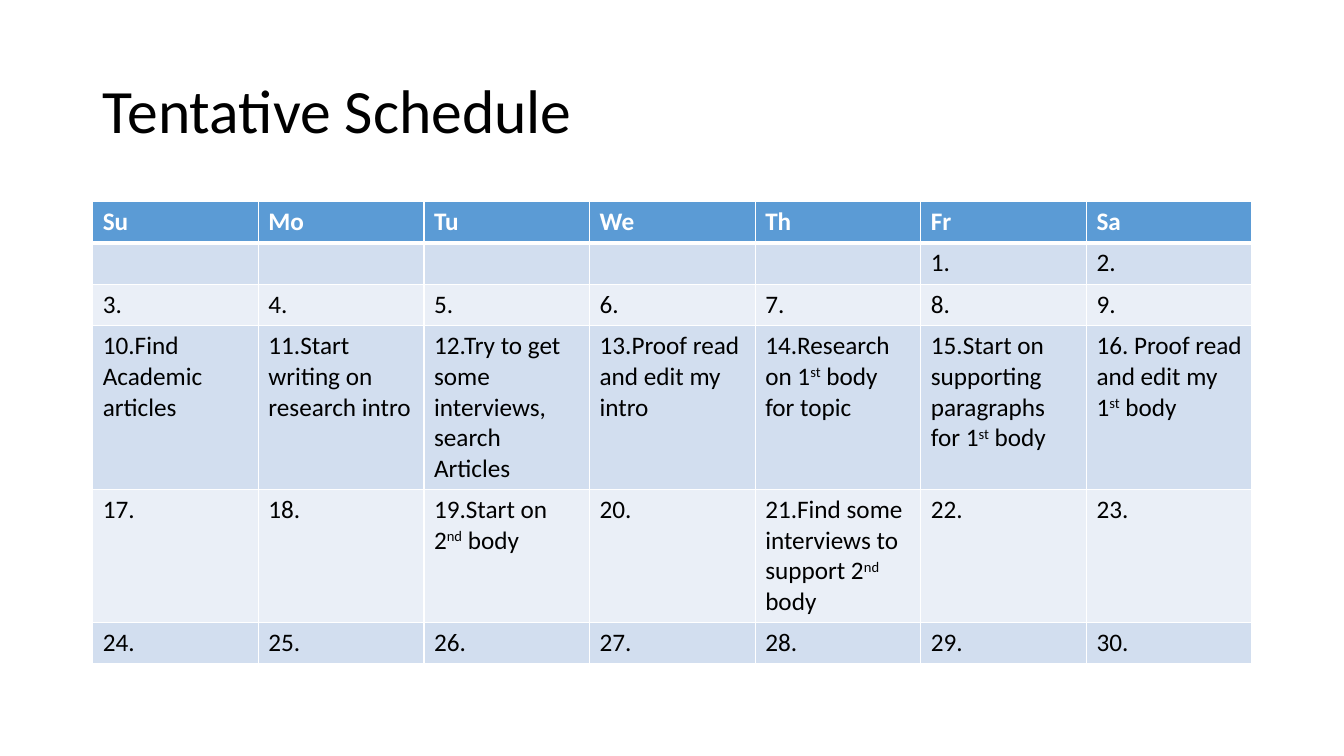
from dataclasses import dataclass

from lxml.etree import SubElement
from pptx import Presentation
from pptx.dml.color import RGBColor
from pptx.enum.text import MSO_ANCHOR, MSO_AUTO_SIZE, PP_ALIGN
from pptx.oxml.ns import qn
from pptx.slide import Slide
from pptx.table import _Cell
from pptx.text.text import _Paragraph
from pptx.util import Inches, Pt

BLACK = RGBColor(0x00, 0x00, 0x00)
WHITE = RGBColor(0xFF, 0xFF, 0xFF)
HEADER_BLUE = RGBColor(0x5B, 0x9B, 0xD5)
BAND_FILLS = (RGBColor(0xEA, 0xEF, 0xF7), RGBColor(0xD2, 0xDE, 0xEF))
FONT = "Calibri"

WEEKDAYS = ("Su", "Mo", "Tu", "We", "Th", "Fr", "Sa")
FIRST_WEEKDAY = WEEKDAYS.index("Fr")
DAYS_IN_MONTH = 30
ROW_HEIGHTS = (0.41, 0.41, 0.41, 1.62, 1.32, 0.41)


@dataclass(frozen=True)
class Task:
    text: str
    ordinal: str = ""
    rest: str = ""


TASKS: dict[int, Task] = {
    10: Task("Find Academic articles"),
    11: Task("Start writing on research intro"),
    12: Task("Try to get some interviews, search Articles"),
    13: Task("Proof read and edit my intro"),
    14: Task("Research on 1", "st", " body for topic"),
    15: Task("Start on supporting paragraphs for 1", "st", " body"),
    16: Task(" Proof read and edit my 1", "st", " body"),
    19: Task("Start on 2", "nd", " body"),
    21: Task("Find some interviews to support 2", "nd", " body"),
}


def add_run(paragraph: _Paragraph, text: str, size: int, color: RGBColor,
            bold: bool = False, raised: bool = False) -> None:
    run = paragraph.add_run()
    run.text = text
    run.font.name = FONT
    run.font.size = Pt(size)
    run.font.bold = bold
    run.font.color.rgb = color
    if raised:
        run.font._element.set("baseline", "30000")


def format_cell(cell: _Cell, fill: RGBColor, top: int = 1, bottom: int = 1) -> None:
    properties = cell._tc.get_or_add_tcPr()
    for side, width in (("L", 1), ("R", 1), ("T", top), ("B", bottom)):
        border = SubElement(properties, qn(f"a:ln{side}"), w=str(Pt(width)))
        border_fill = SubElement(border, qn("a:solidFill"))
        SubElement(border_fill, qn("a:srgbClr"), val=str(WHITE))
    cell.fill.solid()
    cell.fill.fore_color.rgb = fill


def add_title(slide: Slide, text: str) -> None:
    title = slide.shapes.title
    title.left, title.top = Inches(0.92), Inches(0.4)
    title.width, title.height = Inches(11.5), Inches(1.45)
    frame = title.text_frame
    frame.word_wrap = True
    frame.auto_size = MSO_AUTO_SIZE.NONE
    frame.vertical_anchor = MSO_ANCHOR.MIDDLE
    paragraph = frame.paragraphs[0]
    paragraph.alignment = PP_ALIGN.LEFT
    paragraph.line_spacing = 0.9
    add_run(paragraph, text, 44, BLACK)


def add_calendar(slide: Slide) -> None:
    calendar = slide.shapes.add_table(
        len(ROW_HEIGHTS), len(WEEKDAYS), Inches(0.92), Inches(2),
        Inches(11.5), Inches(sum(ROW_HEIGHTS))).table
    for row, height in zip(calendar.rows, ROW_HEIGHTS):
        row.height = Inches(height)

    for column, weekday in enumerate(WEEKDAYS):
        header = calendar.cell(0, column)
        format_cell(header, HEADER_BLUE, bottom=3)
        add_run(header.text_frame.paragraphs[0], weekday, 18, WHITE, bold=True)
        for week in range(1, len(ROW_HEIGHTS)):
            format_cell(calendar.cell(week, column), BAND_FILLS[week % 2],
                        top=3 if week == 1 else 1)

    for day in range(1, DAYS_IN_MONTH + 1):
        week, column = divmod(day - 1 + FIRST_WEEKDAY, len(WEEKDAYS))
        paragraph = calendar.cell(week + 1, column).text_frame.paragraphs[0]
        task = TASKS.get(day, Task(""))
        add_run(paragraph, f"{day}.{task.text}", 18, BLACK)
        if task.ordinal:
            add_run(paragraph, task.ordinal, 18, BLACK, raised=True)
            add_run(paragraph, task.rest, 18, BLACK)


def main() -> None:
    presentation = Presentation()
    presentation.slide_width = Inches(13.33)
    presentation.slide_height = Inches(7.5)
    slide = presentation.slides.add_slide(presentation.slide_layouts[5])
    add_title(slide, "Tentative Schedule")
    add_calendar(slide)
    presentation.save("out.pptx")


if __name__ == "__main__":
    main()
